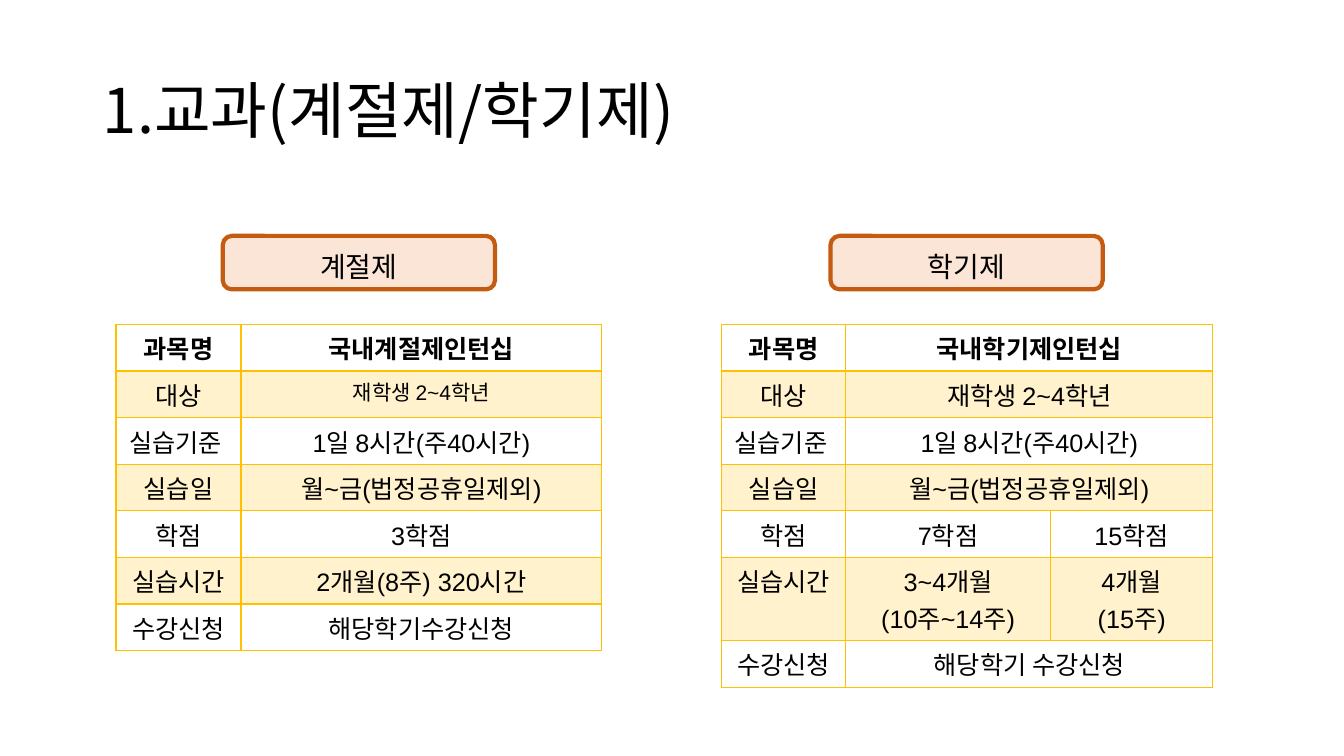
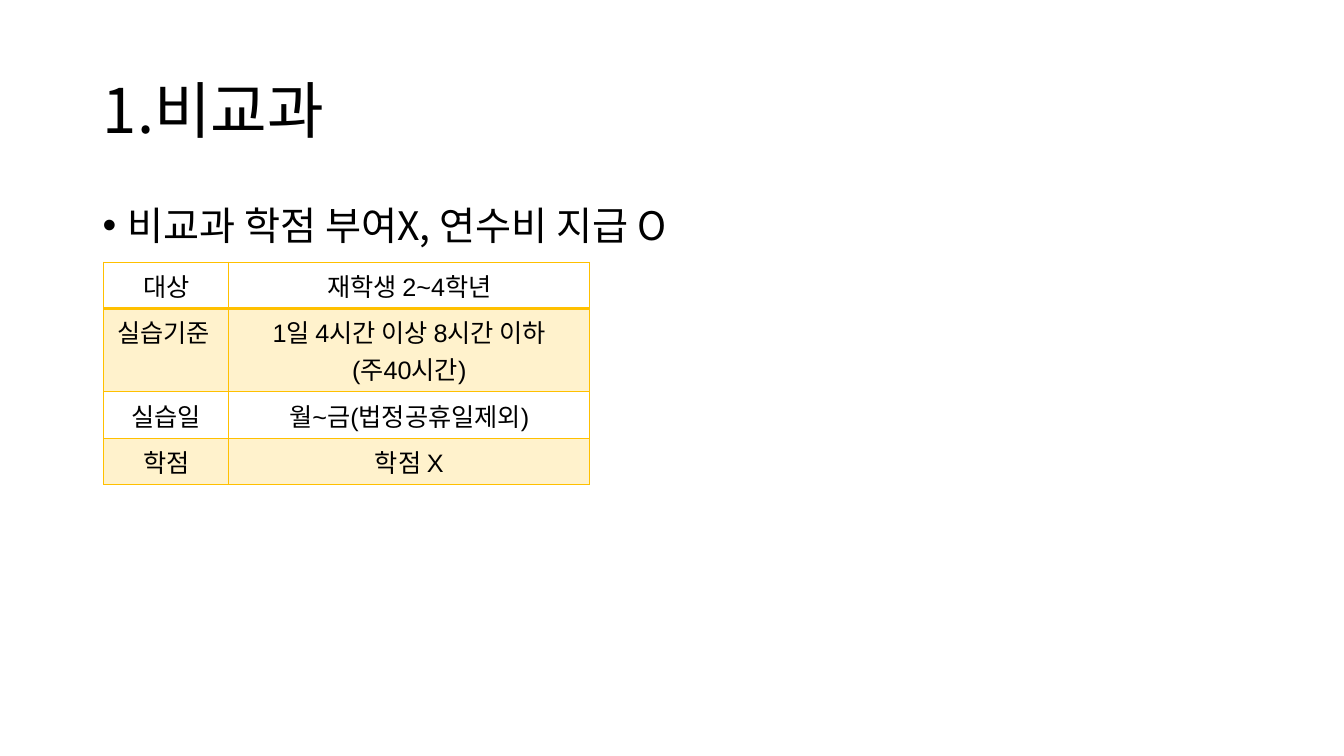
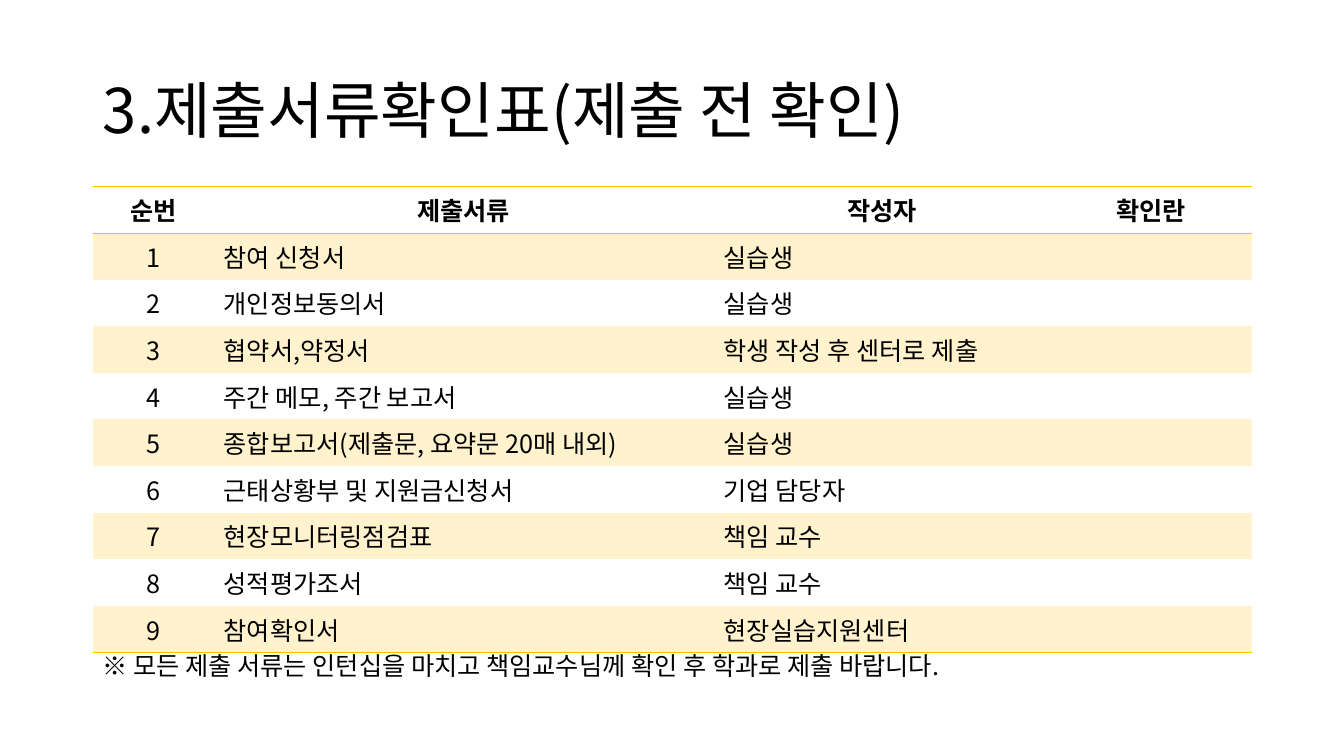
import dataclasses
from typing import Optional

import pptx
import pptx.dml.color
import pptx.enum.shapes
import pptx.enum.text
import pptx.oxml
import pptx.oxml.ns
import pptx.util

Pt = pptx.util.Pt
RGBColor = pptx.dml.color.RGBColor
PP_ALIGN = pptx.enum.text.PP_ALIGN
MSO_ANCHOR = pptx.enum.text.MSO_ANCHOR
MSO_AUTO_SIZE = pptx.enum.text.MSO_AUTO_SIZE
qn = pptx.oxml.ns.qn

SLIDE_W = pptx.util.Inches(13.33)
SLIDE_H = pptx.util.Inches(7.5)

BLACK = RGBColor(0x00, 0x00, 0x00)
GOLD = RGBColor(0xFF, 0xC0, 0x00)
PALE_GOLD = RGBColor(0xFF, 0xF2, 0xCC)
RUST = RGBColor(0xC5, 0x5A, 0x11)
PEACH = RGBColor(0xFB, 0xE5, 0xD6)

KOREAN = "Noto Sans CJK KR"
LATIN = "Arial"

TEXT_PT = 18
LINE_ROW = 6.16  # one-line table row, percent of slide height
EXTRA_LINE = 4.83
EDGES = ("L", "R", "T", "B")


@dataclasses.dataclass(frozen=True)
class Box:
    """Left, top, width and height in percent of the slide."""
    left: float
    top: float
    width: float
    height: float

    def emu(self) -> tuple[int, int, int, int]:
        return x(self.left), y(self.top), x(self.width), y(self.height)


@dataclasses.dataclass(frozen=True)
class Label:
    text: str
    left: float


@dataclasses.dataclass(frozen=True)
class Grid:
    """A table; None in a row joins that cell to the one on its left."""
    left: float
    top: float
    cols: tuple[float, ...]
    rows: tuple[tuple[Optional[str], ...], ...]
    font: str = LATIN
    header: bool = True
    boxed: bool = True
    left_cols: tuple[int, ...] = ()
    sizes: dict[tuple[int, int], int] = dataclasses.field(default_factory=dict)


TITLE_BOX = Box(6.9, 5.33, 86.25, 19.33)
BULLET_BOX = Box(6.9, 26.67, 86.25, 8)
NOTE_BOX = Box(6.9, 85.33, 72.08, 5.33)

LABELS = (Label("계절제", 16.58), Label("학기제", 61.8))

SEASON = Grid(8.63, 42.93, (9.3, 26.85), (
    ("과목명", "국내계절제인턴십"),
    ("대상", "재학생 2~4학년"),
    ("실습기준 ", "1일 8시간(주40시간)"),
    ("실습일", "월~금(법정공휴일제외)"),
    ("학점", "3학점"),
    ("실습시간", "2개월(8주) 320시간"),
    ("수강신청", "해당학기수강신청"),
), sizes={(1, 1): 15})

SEMESTER = Grid(53.7, 42.93, (9.23, 15.23, 12.08), (
    ("과목명", "국내학기제인턴십", None),
    ("대상", "재학생 2~4학년", None),
    ("실습기준 ", "1일 8시간(주40시간)", None),
    ("실습일", "월~금(법정공휴일제외)", None),
    ("학점", "7학점", "15학점"),
    ("실습시간", "3~4개월\n(10주~14주)", "4개월\n(15주)"),
    ("수강신청", "해당학기 수강신청", None),
))

EXTRA = Grid(7.73, 34.67, (9.3, 26.85), (
    ("대상", "재학생 2~4학년"),
    ("실습기준 ", "1일 4시간 이상 8시간 이하\n(주40시간)"),
    ("실습일", "월~금(법정공휴일제외)"),
    ("학점", "학점 X"),
), header=False)

DOCUMENTS = (
    ("참여 신청서", "실습생"),
    ("개인정보동의서", "실습생"),
    ("협약서,약정서", "학생 작성 후 센터로 제출"),
    ("주간 메모, 주간 보고서", "실습생"),
    ("종합보고서(제출문, 요약문 20매 내외)", "실습생"),
    ("근태상황부 및 지원금신청서", "기업 담당자"),
    ("현장모니터링점검표", "책임 교수"),
    ("성적평가조서", "책임 교수"),
    ("참여확인서", "현장실습지원센터"),
)
CHECKLIST = Grid(6.9, 24.67, (9, 37.2, 25.05, 15), (
    ("순번", "제출서류", "작성자", "확인란"),
    *((str(n), name, author, "")
      for n, (name, author) in enumerate(DOCUMENTS, 1)),
), font=KOREAN, boxed=False, left_cols=(1, 2))


def x(percent: float) -> int:
    return round(SLIDE_W * percent / 100)


def y(percent: float) -> int:
    return round(SLIDE_H * percent / 100)


def style(p, size: float, font: str = KOREAN, bold: bool = False,
          align=PP_ALIGN.LEFT) -> None:
    p.alignment = align
    p.font.size = Pt(size)
    p.font.bold = bold
    p.font.color.rgb = BLACK
    p.font.name = font
    east_asian = pptx.oxml.parse_xml(
        f'<a:ea {pptx.oxml.ns.nsdecls("a")} typeface="{KOREAN}"/>')
    p._p.pPr.find(qn("a:defRPr")).append(east_asian)


def add_titled_slide(prs, title: str):
    s = prs.slides.add_slide(prs.slide_layouts[5])
    sp = s.shapes.title
    sp.left, sp.top, sp.width, sp.height = TITLE_BOX.emu()
    tf = sp.text_frame
    tf.text = title
    tf.auto_size = MSO_AUTO_SIZE.NONE
    tf.vertical_anchor = MSO_ANCHOR.MIDDLE
    p = tf.paragraphs[0]
    p.line_spacing = 0.9
    style(p, 44)
    return s


def add_text(s, box: Box, text: str, size: float, wrap: bool = True):
    tf = s.shapes.add_textbox(*box.emu()).text_frame
    tf.word_wrap = wrap
    tf.text = text
    p = tf.paragraphs[0]
    style(p, size)
    return p


def add_bullet(s, text: str) -> None:
    p = add_text(s, BULLET_BOX, text, 28)
    p.line_spacing = 0.9
    p.space_before = Pt(10)
    pPr = p._p.pPr
    indent = pptx.util.Inches(0.25)
    pPr.set("marL", str(indent))
    pPr.set("indent", str(-indent))
    ns = pptx.oxml.ns.nsdecls("a")
    defaults = pPr.find(qn("a:defRPr"))
    for xml in (f'<a:buFont {ns} typeface="{LATIN}"/>',
                f'<a:buChar {ns} char="•"/>'):
        defaults.addprevious(pptx.oxml.parse_xml(xml))


def add_label(s, label: Label) -> None:
    sp = s.shapes.add_shape(pptx.enum.shapes.MSO_SHAPE.ROUNDED_RECTANGLE,
                            *Box(label.left, 31.2, 20.25, 7.07).emu())
    sp.shadow.inherit = False
    sp.fill.solid()
    sp.fill.fore_color.rgb = PEACH
    sp.line.color.rgb = RUST
    sp.line.width = Pt(3)
    tf = sp.text_frame
    tf.margin_top, tf.margin_bottom = y(1.07), 0
    tf.vertical_anchor = MSO_ANCHOR.MIDDLE
    tf.text = label.text
    style(tf.paragraphs[0], 20, align=PP_ALIGN.CENTER)


def set_borders(cell, widths: dict[str, float]) -> None:
    """Draw the named edges at the given point widths and clear the others."""
    tcPr = cell._tc.get_or_add_tcPr()
    ns = pptx.oxml.ns.nsdecls("a")
    for i, edge in enumerate(EDGES):
        width = widths.get(edge, 0)
        paint = (f'<a:solidFill><a:srgbClr val="{GOLD}"/></a:solidFill>'
                 if width else "<a:noFill/>")
        tcPr.insert(i, pptx.oxml.parse_xml(
            f'<a:ln{edge} {ns} w="{Pt(width)}">{paint}</a:ln{edge}>'))


def edge_widths(grid: Grid, row: int) -> dict[str, float]:
    if grid.boxed:
        widths = dict.fromkeys(EDGES, 1)
        if row == 0:
            widths["B"] = 2
        elif row == 1:
            widths["T"] = 2
        return widths
    widths = {}
    if row <= 1:
        widths["T"] = 1
    if row in (0, len(grid.rows) - 1):
        widths["B"] = 1
    return widths


def add_grid(s, grid: Grid) -> None:
    heights = [LINE_ROW + EXTRA_LINE * max((t or "").count("\n") for t in row)
               for row in grid.rows]
    box = Box(grid.left, grid.top, sum(grid.cols), sum(heights))
    table = s.shapes.add_table(len(grid.rows), len(grid.cols),
                               *box.emu()).table
    table.first_row = table.horz_banding = False
    for column, width in zip(table.columns, grid.cols):
        column.width = x(width)
    for r, texts in enumerate(grid.rows):
        table.rows[r].height = y(heights[r])
        for c, text in enumerate(texts):
            cell = table.cell(r, c)
            if r % 2:
                cell.fill.solid()
                cell.fill.fore_color.rgb = PALE_GOLD
            else:
                cell.fill.background()
            set_borders(cell, edge_widths(grid, r))
            if text is None:
                table.cell(r, c - 1).merge(cell)
                continue
            cell.text = text
            is_header = grid.header and r == 0
            align = (PP_ALIGN.LEFT if c in grid.left_cols and not is_header
                     else PP_ALIGN.CENTER)
            for p in cell.text_frame.paragraphs:
                style(p, grid.sizes.get((r, c), TEXT_PT), grid.font,
                      is_header, align)


def main() -> None:
    prs = pptx.Presentation()
    prs.slide_width, prs.slide_height = SLIDE_W, SLIDE_H

    s = add_titled_slide(prs, "1.교과(계절제/학기제)")
    for label in LABELS:
        add_label(s, label)
    for grid in (SEASON, SEMESTER):
        add_grid(s, grid)

    s = add_titled_slide(prs, "1.비교과")
    add_bullet(s, "비교과 학점 부여X, 연수비 지급 O")
    add_grid(s, EXTRA)

    s = add_titled_slide(prs, "3.제출서류확인표(제출 전 확인)")
    add_grid(s, CHECKLIST)
    add_text(s, NOTE_BOX, "※ 모든 제출 서류는 인턴십을 마치고 책임교수님께 "
             "확인 후 학과로 제출 바랍니다.", TEXT_PT, wrap=False)

    prs.save("out.pptx")


if __name__ == "__main__":
    main()
